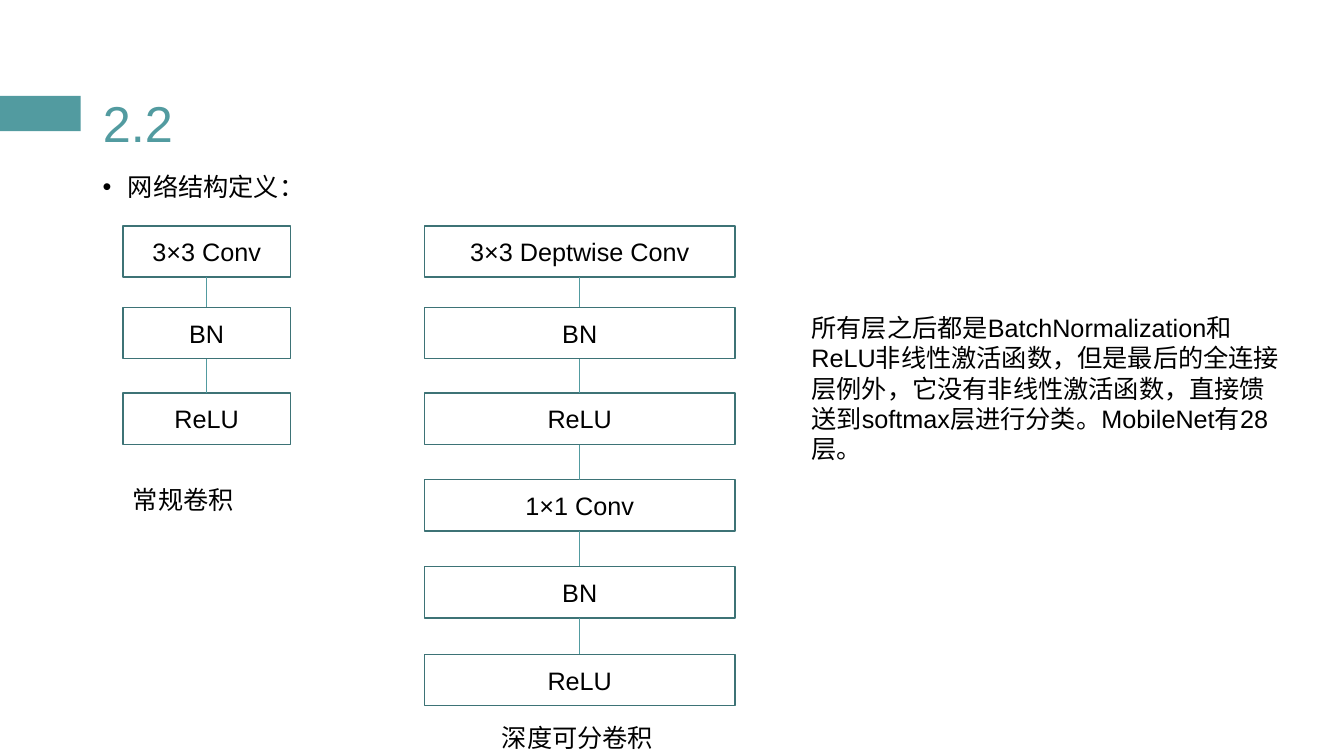
from itertools import pairwise

from pptx import Presentation
from pptx.dml.color import RGBColor
from pptx.enum.shapes import MSO_CONNECTOR, MSO_SHAPE
from pptx.enum.text import MSO_ANCHOR, MSO_AUTO_SIZE, PP_ALIGN
from pptx.oxml.ns import qn
from pptx.util import Inches, Pt

TEAL, DARK_TEAL, WHITE, BLACK = "529BA0", "3D7376", "FFFFFF", "000000"
LAYER_TOPS = [2.24, 3.05, 3.9, 4.76, 5.62, 6.49]
LAYER_HEIGHT = 0.51


def rgb(color):
    return RGBColor.from_string(color)


def write(frame, text, size=18, color=BLACK, anchor=MSO_ANCHOR.TOP, **paragraph_format):
    """Fill a text frame with one formatted paragraph and return it."""
    frame_format = {"word_wrap": True, "auto_size": MSO_AUTO_SIZE.NONE, "vertical_anchor": anchor}
    for name, value in frame_format.items():
        setattr(frame, name, value)
    paragraph = frame.paragraphs[0]
    for name, value in paragraph_format.items():
        setattr(paragraph, name, value)
    run = paragraph.add_run()
    run.text = text
    run.font.name = "Arial"
    run.font.size = Pt(size)
    run.font.color.rgb = rgb(color)
    return paragraph


def add_title(slide, text):
    title = slide.shapes.title
    place = {"left": 0.92, "top": 0.43, "width": 11.5, "height": 1.45}
    for name, value in place.items():
        setattr(title, name, Inches(value))
    write(title.text_frame, text, size=36, color=TEAL, anchor=MSO_ANCHOR.MIDDLE,
          alignment=PP_ALIGN.LEFT, line_spacing=1.2)


def add_text(slide, text, left, top, width, height, **paragraph_format):
    box = slide.shapes.add_textbox(*map(Inches, (left, top, width, height)))
    return write(box.text_frame, text, **paragraph_format)


def add_bullet(paragraph, indent):
    properties = paragraph._p.get_or_add_pPr()
    properties.set("marL", str(Inches(indent)))
    properties.set("indent", str(Inches(-indent)))
    properties.append(properties.makeelement(qn("a:buFont"), {"typeface": "Arial"}))
    properties.append(properties.makeelement(qn("a:buChar"), {"char": "•"}))


def add_rectangle(slide, left, top, width, height, fill, outline=None):
    rectangle = slide.shapes.add_shape(
        MSO_SHAPE.RECTANGLE, *map(Inches, (left, top, width, height)))
    rectangle.shadow.inherit = False
    rectangle.fill.solid()
    rectangle.fill.fore_color.rgb = rgb(fill)
    if outline:
        rectangle.line.color.rgb = rgb(outline)
        rectangle.line.width = Pt(1)
    else:
        rectangle.line.fill.background()
    return rectangle


def add_link(slide, x, top, bottom):
    link = slide.shapes.add_connector(
        MSO_CONNECTOR.STRAIGHT, *map(Inches, (x, top, x, bottom)))
    link.line.color.rgb = rgb(TEAL)
    link.line.width = Pt(0.5)
    properties = link._element.spPr
    properties.append(properties.makeelement(qn("a:effectLst"), {}))


def add_layer_stack(slide, layers, left, width):
    """Stack the layer boxes downwards and link each one to the next."""
    tops = LAYER_TOPS[:len(layers)]
    for layer, top in zip(layers, tops):
        box = add_rectangle(slide, left, top, width, LAYER_HEIGHT, WHITE, DARK_TEAL)
        write(box.text_frame, layer, anchor=MSO_ANCHOR.MIDDLE, alignment=PP_ALIGN.CENTER)
    for top, next_top in pairwise(tops):
        add_link(slide, left + width / 2, top + LAYER_HEIGHT, next_top)


def main():
    presentation = Presentation()
    presentation.slide_width = Inches(13.33)
    presentation.slide_height = Inches(7.5)
    slide = presentation.slides.add_slide(presentation.slide_layouts[5])

    add_rectangle(slide, 0, 0.95, 0.8, 0.35, TEAL)
    add_title(slide, "2.2")
    heading = add_text(slide, "网络结构定义：", 0.92, 1.59, 7.03, 0.6,
                       alignment=PP_ALIGN.JUSTIFY, line_spacing=1.2, space_before=Pt(10))
    add_bullet(heading, 0.25)

    add_layer_stack(slide, ["3×3 Conv", "BN", "ReLU"], 1.22, 1.66)
    add_layer_stack(slide, ["3×3 Deptwise Conv", "BN", "ReLU", "1×1 Conv", "BN", "ReLU"],
                    4.21, 3.08)
    add_text(slide, "常规卷积", 1.22, 4.76, 1.68, 0.4)
    add_text(slide, "深度可分卷积", 4.88, 7.12, 1.73, 0.4)
    add_text(slide, "所有层之后都是BatchNormalization和ReLU非线性激活函数，但是最后的全连接层例外，"
                    "它没有非线性激活函数，直接馈送到softmax层进行分类。MobileNet有28层。",
             7.95, 3.05, 4.86, 1.61)

    presentation.save("out.pptx")


if __name__ == "__main__":
    main()
